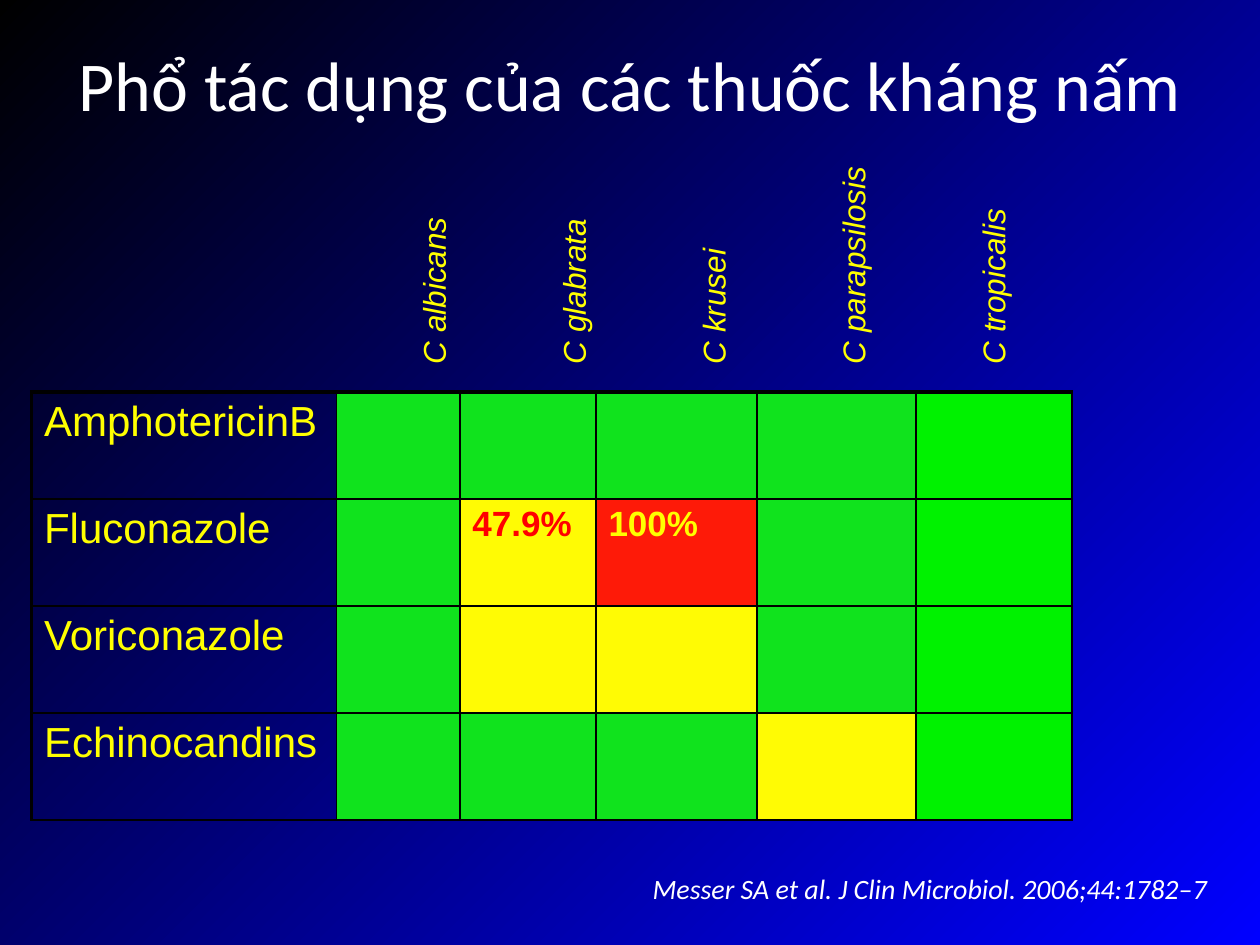
import pptx
import pptx.dml.color
import pptx.enum.text
import pptx.oxml
import pptx.oxml.ns
import pptx.util
from dataclasses import dataclass
from lxml import etree

ALIGN = pptx.enum.text.PP_ALIGN
ANCHOR = pptx.enum.text.MSO_ANCHOR
FIT = pptx.enum.text.MSO_AUTO_SIZE
GRID_COLUMNS, GRID_ROWS = 100, 75


@dataclass(frozen=True)
class Theme:
    glow: str = "0000FF"
    dark: str = "000000"
    light: str = "FFFFFF"
    label: str = "FFFF00"
    alert: str = "FF0000"
    active: str = "10E31D"
    active_last: str = "00F200"
    partial: str = "FFFB04"
    resistant: str = "FE1A08"
    heading_font: str = "Calibri"
    table_font: str = "Arial"
    title_size: int = 40
    drug_size: int = 24
    rate_size: int = 20
    species_size: int = 18
    citation_size: int = 16
    outer_line: float = 2.25
    inner_line: float = 1


def rgb(value):
    return pptx.dml.color.RGBColor.from_string(value)


def write(frame, lines, *, font, size, color, bold=False, italic=False,
          align=ALIGN.LEFT, spacing=None):
    """Fill a text frame with one formatted paragraph per line."""
    for index, line in enumerate(lines):
        paragraph = frame.add_paragraph() if index else frame.paragraphs[0]
        paragraph.alignment = align
        paragraph.line_spacing = spacing
        run = paragraph.add_run()
        run.text = line
        run.font.name, run.font.size = font, pptx.util.Pt(size)
        run.font.bold, run.font.italic = bold, italic
        run.font.color.rgb = rgb(color)


def draw_borders(cell, color, widths):
    """Set the left, right, top and bottom lines of a cell, in points."""
    properties = cell._tc.get_or_add_tcPr()
    for index, (side, width) in enumerate(zip("LRTB", widths)):
        line = pptx.oxml.parse_xml(
            f'<a:ln{side} {pptx.oxml.ns.nsdecls("a")} w="{pptx.util.Pt(width)}">'
            f'<a:solidFill><a:srgbClr val="{color}"/></a:solidFill></a:ln{side}>')
        properties.insert(index, line)


class SlideBuilder:
    def __init__(self, deck, theme):
        self.theme = theme
        self.column = deck.slide_width / GRID_COLUMNS
        self.row = deck.slide_height / GRID_ROWS
        self.slide = deck.slides.add_slide(deck.slide_layouts[5])

    def box(self, left, top, width, height):
        """Turn grid columns and rows into slide lengths."""
        return (round(left * self.column), round(top * self.row),
                round(width * self.column), round(height * self.row))

    def background(self):
        """Glow from the bottom right corner into the dark top left."""
        fill = self.slide.background.fill
        fill.gradient()
        for stop, color in zip(fill.gradient_stops, (self.theme.glow, self.theme.dark)):
            stop.color.rgb = rgb(color)
        qn = pptx.oxml.ns.qn
        gradient = self.slide.background._cSld.find(".//" + qn("a:gradFill"))
        gradient.remove(gradient.find(qn("a:lin")))
        shade = etree.SubElement(gradient, qn("a:path"), {"path": "circle"})
        etree.SubElement(shade, qn("a:fillToRect"), {"l": "100000", "t": "100000"})

    def title(self, text, place):
        heading = self.slide.shapes.title
        heading.left, heading.top, heading.width, heading.height = self.box(*place)
        frame = heading.text_frame
        frame.auto_size = FIT.NONE
        frame.vertical_anchor = ANCHOR.MIDDLE
        write(frame, [text], font=self.theme.heading_font, size=self.theme.title_size,
              color=self.theme.light, align=ALIGN.CENTER)

    def label(self, lines, place, rotation=0, **style):
        note = self.slide.shapes.add_textbox(*self.box(*place))
        note.rotation = rotation
        note.text_frame.word_wrap = False
        note.text_frame.auto_size = FIT.SHAPE_TO_FIT_TEXT
        write(note.text_frame, lines, **style)

    def spectrum(self, drugs, fills, rates, place, widths):
        """Add the drug table: names in the first column, coloured cells after it."""
        theme = self.theme
        table = self.slide.shapes.add_table(
            len(drugs), len(widths), *self.box(*place)).table
        table.first_row = table.horz_banding = False
        for column, width in zip(table.columns, widths):
            column.width = round(width * self.column)
        for r, drug in enumerate(drugs):
            for c in range(len(widths)):
                cell = table.cell(r, c)
                if c:
                    cell.fill.solid()
                    cell.fill.fore_color.rgb = rgb(fills[r][c - 1])
                else:
                    cell.fill.background()
                    write(cell.text_frame, [drug], font=theme.table_font,
                          size=theme.drug_size, color=theme.label)
                if (r, c) in rates:
                    rate, color = rates[r, c]
                    write(cell.text_frame, [rate], font=theme.table_font,
                          size=theme.rate_size, color=color, bold=True)
                left = theme.inner_line if c else theme.outer_line
                top = theme.inner_line if r else theme.outer_line
                draw_borders(cell, theme.dark,
                             (left, theme.inner_line, top, theme.inner_line))


def main():
    deck = pptx.Presentation()
    deck.slide_width, deck.slide_height = pptx.util.Inches(10), pptx.util.Inches(7.5)
    theme = Theme()
    page = SlideBuilder(deck, theme)
    page.background()
    page.title("Phổ tác dụng của các thuốc kháng nấm", (0, 0.4, 100, 12.5))

    shades = {"G": theme.active, "L": theme.active_last,
              "Y": theme.partial, "R": theme.resistant}
    activity = {"AmphotericinB": "GGGGL", "Fluconazole": "GYRGL",
                "Voriconazole": "GYYGL", "Echinocandins": "GGGYL"}
    page.spectrum(
        list(activity),
        [[shades[code] for code in codes] for codes in activity.values()],
        {(1, 2): ("47.9%", theme.alert), (1, 3): ("100%", theme.label)},
        (2.5, 31.1, 82.6, 34), (24.2, 9.8, 10.8, 12.8, 12.6, 12.4))

    page.label(
        ["C albicans", "C glabrata", "C krusei", "C parapsilosis", "C tropicalis"],
        (42.9, -7.2, 18.5, 55.7), rotation=270, font=theme.table_font,
        size=theme.species_size, color=theme.label, italic=True, spacing=3.7)
    page.label(
        ["Messer SA et al. J Clin Microbiol. 2006;44:1782–7"],
        (49.7, 68.7, 47.1, 3.7), font=theme.heading_font, size=theme.citation_size,
        color=theme.light, italic=True, align=ALIGN.RIGHT)
    deck.save("out.pptx")


if __name__ == "__main__":
    main()
